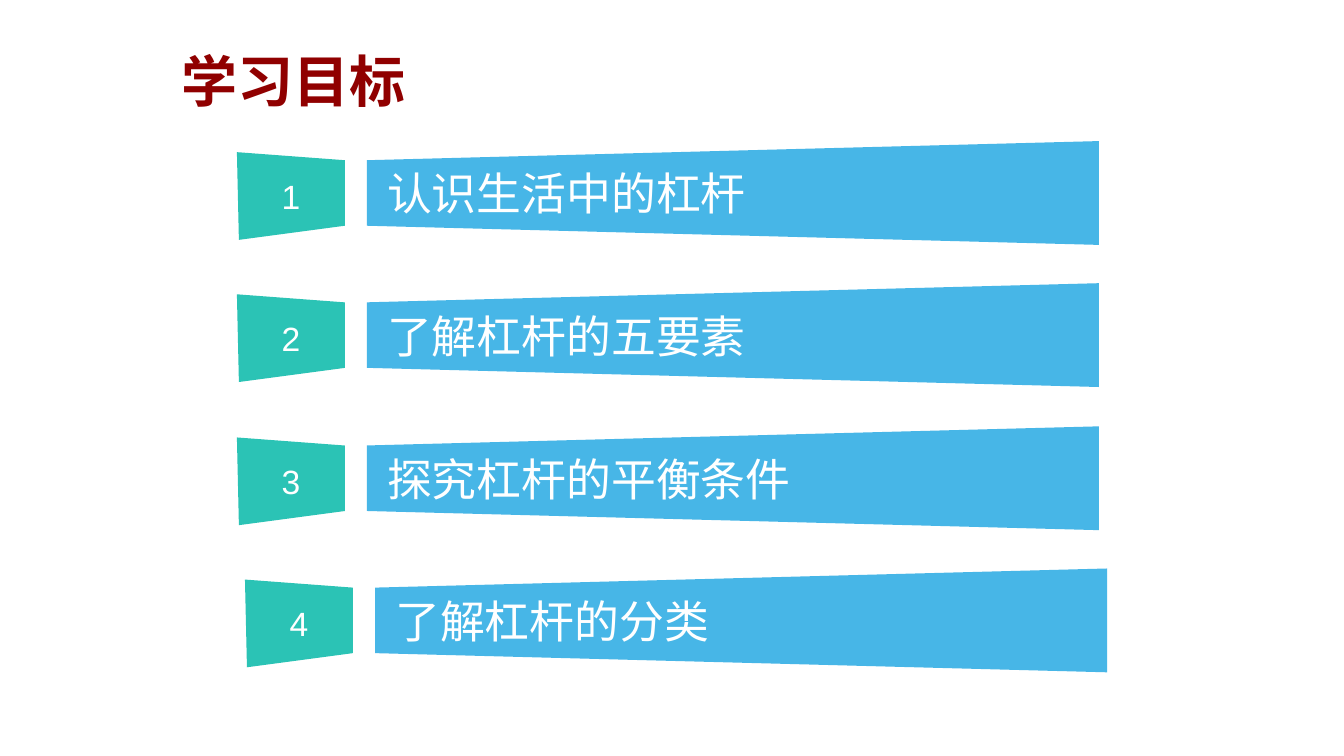
"""Build the learning goals slide: a title and four numbered goals."""
import pptx
import pptx.dml.color
import pptx.enum.text
import pptx.util

PX = 9144
FONT = "Arial"
WHITE = "FFFFFF"


def rgb(value):
    return pptx.dml.color.RGBColor.from_string(value)


def add_panel(shapes, points, fill, text, size, align, insets):
    builder = shapes.build_freeform(*points[0], scale=PX)
    builder.add_line_segments(points[1:], close=True)
    sp = builder.convert_to_shape()
    sp.shadow.inherit = False
    sp.fill.solid()
    sp.fill.fore_color.rgb = rgb(fill)
    sp.line.fill.background()
    tf = sp.text_frame
    tf.word_wrap = True
    tf.vertical_anchor = pptx.enum.text.MSO_ANCHOR.MIDDLE
    tf.margin_left, tf.margin_right = [n * PX for n in insets]
    tf.margin_top = tf.margin_bottom = 0
    p = tf.paragraphs[0]
    p.text = text
    p.alignment = align
    p.font.size = pptx.util.Pt(size)
    p.font.name = FONT
    p.font.color.rgb = rgb(WHITE)


prs = pptx.Presentation()
prs.slide_width, prs.slide_height = 1333 * PX, 750 * PX
s = prs.slides.add_slide(prs.slide_layouts[5])
align = pptx.enum.text.PP_ALIGN

title = s.shapes.title
title.left, title.top, title.width, title.height = [n * PX for n in (170, 21, 376, 89)]
tf = title.text_frame
tf.word_wrap = True
tf.auto_size = pptx.enum.text.MSO_AUTO_SIZE.NONE
tf.vertical_anchor = pptx.enum.text.MSO_ANCHOR.TOP
p = tf.paragraphs[0]
p.text = "学习目标"
p.alignment = align.LEFT
p.line_spacing = 1.3
p.font.size = pptx.util.Pt(40)
p.font.name = FONT
p.font.bold = True
p.font.color.rgb = rgb("900000")

goals = [
    ("认识生活中的杠杆", 235),
    ("了解杠杆的五要素", 235),
    ("探究杠杆的平衡条件", 235),
    ("了解杠杆的分类", 243),
]
for i, (goal, x) in enumerate(goals):
    y = 140 + round(i * 424 / 3)
    row = s.shapes.add_group_shape().shapes
    tab = [(x, y + 11), (x + 107, y + 19), (x + 107, y + 84), (x + 2, y + 98)]
    bar = [(x + 855, y), (x + 855, y + 103), (x + 129, y + 84), (x + 129, y + 19)]
    add_panel(row, tab, "2BC3B5", str(i + 1), 24, align.CENTER, (0, 0))
    add_panel(row, bar, "47B6E7", goal, 32, align.LEFT, (20, 4))

prs.save("out.pptx")
